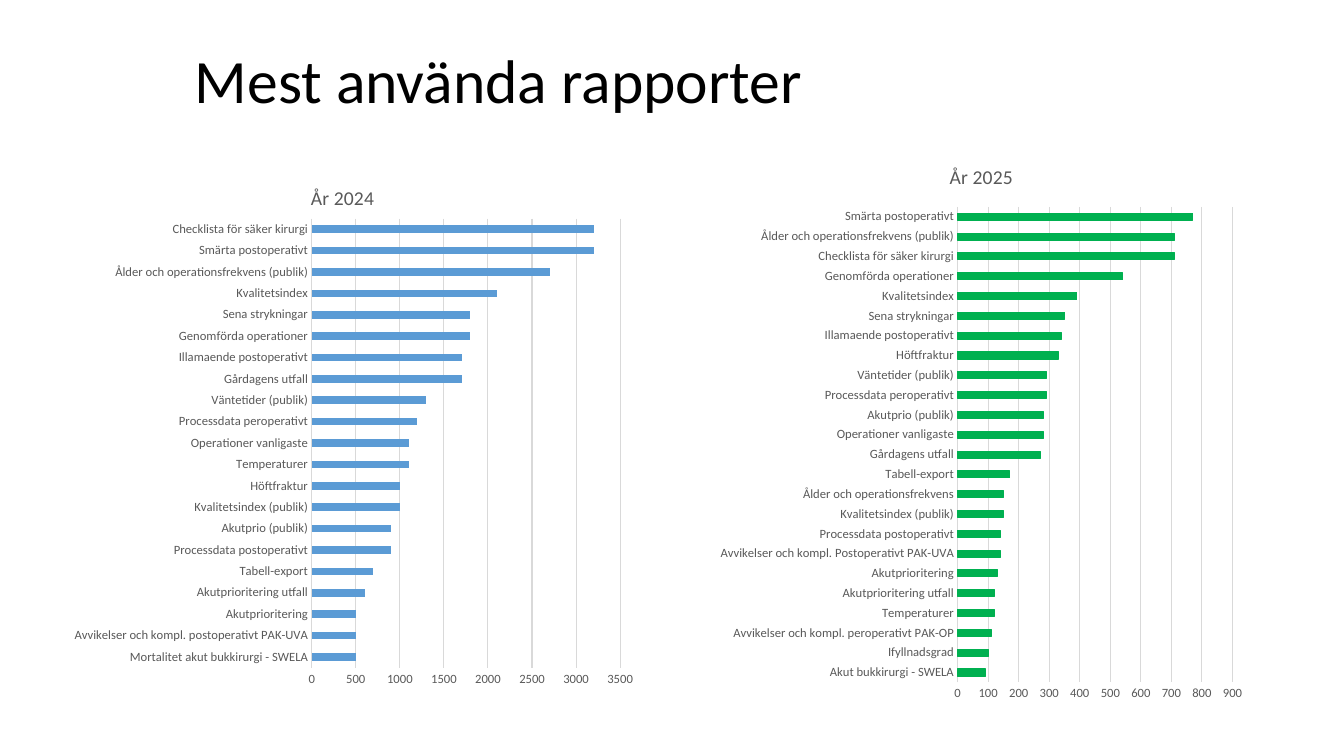
from pptx import Presentation, util as u
from pptx.chart.data import CategoryChartData
from pptx.dml.color import RGBColor
from pptx.enum import chart as kinds, text
from pptx.oxml import parse_xml
from pptx.oxml.ns import nsdecls, qn

BLACK = RGBColor(0x00, 0x00, 0x00)
GREY = RGBColor(0x59, 0x59, 0x59)
RULE = RGBColor(0xD9, 0xD9, 0xD9)
BLUE = RGBColor(0x5B, 0x9B, 0xD5)
GREEN = RGBColor(0x00, 0xB0, 0x50)

REPORTS_2024 = [
    ("Mortalitet akut bukkirurgi - SWELA", 500),
    ("Avvikelser och kompl. postoperativt PAK-UVA", 500),
    ("Akutprioritering", 500),
    ("Akutprioritering utfall", 600),
    ("Tabell-export", 700),
    ("Processdata postoperativt", 900),
    ("Akutprio (publik)", 900),
    ("Kvalitetsindex (publik)", 1000),
    ("Höftfraktur", 1000),
    ("Temperaturer", 1100),
    ("Operationer vanligaste", 1100),
    ("Processdata peroperativt", 1200),
    ("Väntetider (publik)", 1300),
    ("Gårdagens utfall", 1700),
    ("Illamaende postoperativt", 1700),
    ("Genomförda operationer", 1800),
    ("Sena strykningar", 1800),
    ("Kvalitetsindex", 2100),
    ("Ålder och operationsfrekvens (publik)", 2700),
    ("Smärta postoperativt", 3200),
    ("Checklista för säker kirurgi", 3200),
]
REPORTS_2025 = [
    ("Akut bukkirurgi - SWELA", 90),
    ("Ifyllnadsgrad", 100),
    ("Avvikelser och kompl. peroperativt PAK-OP", 110),
    ("Temperaturer", 120),
    ("Akutprioritering utfall", 120),
    ("Akutprioritering", 130),
    ("Avvikelser och kompl. Postoperativt PAK-UVA", 140),
    ("Processdata postoperativt", 140),
    ("Kvalitetsindex (publik)", 150),
    ("Ålder och operationsfrekvens", 150),
    ("Tabell-export", 170),
    ("Gårdagens utfall", 270),
    ("Operationer vanligaste", 280),
    ("Akutprio (publik)", 280),
    ("Processdata peroperativt", 290),
    ("Väntetider (publik)", 290),
    ("Höftfraktur", 330),
    ("Illamaende postoperativt", 340),
    ("Sena strykningar", 350),
    ("Kvalitetsindex", 390),
    ("Genomförda operationer", 540),
    ("Checklista för säker kirurgi", 710),
    ("Ålder och operationsfrekvens (publik)", 710),
    ("Smärta postoperativt", 770),
]


class ReportPage:
    family = "Calibri"

    def __init__(self, deck):
        self.page = deck.slides.add_slide(deck.slide_layouts[5])

    def style(self, font, size, color):
        font.name = self.family
        font.size = u.Pt(size)
        font.color.rgb = color
        font.bold = False

    def title(self, words, area):
        box = self.page.shapes.title
        box.left, box.top, box.width, box.height = map(u.Pt, area)
        frame = box.text_frame
        frame.text = words
        frame.word_wrap = True
        frame.auto_size = text.MSO_AUTO_SIZE.NONE
        frame.vertical_anchor = text.MSO_ANCHOR.MIDDLE
        para = frame.paragraphs[0]
        para.alignment = text.PP_ALIGN.LEFT
        para.line_spacing = 0.9
        self.style(para.runs[0].font, 44, BLACK)

    def bars(self, name, reports, color, area, maximum, step, plot_area=None):
        data = CategoryChartData()
        data.categories = [report for report, _ in reports]
        data.add_series(name, [count for _, count in reports])
        chart = self.page.shapes.add_chart(
            kinds.XL_CHART_TYPE.BAR_CLUSTERED, *map(u.Pt, area), data).chart
        self.style(chart.font, 10, BLACK)
        chart.has_legend = False
        chart.has_title = True
        heading = chart.chart_title
        heading.include_in_layout = False
        heading.text_frame.text = name
        self.style(heading.text_frame.paragraphs[0].runs[0].font, 14, GREY)

        plot = chart.plots[0]
        plot.gap_width = 182
        plot.vary_by_categories = False
        bar_format = plot.series[0].format
        bar_format.fill.solid()
        bar_format.fill.fore_color.rgb = color
        if color == GREEN:
            self.line(bar_format.line, color)

        for axis in (chart.category_axis, chart.value_axis):
            axis.major_tick_mark = kinds.XL_TICK_MARK.NONE
            axis.minor_tick_mark = kinds.XL_TICK_MARK.NONE
            self.style(axis.tick_labels.font, 9, GREY)
        self.line(chart.category_axis.format.line, RULE)
        values = chart.value_axis
        values.minimum_scale = 0
        values.maximum_scale = maximum
        values.major_unit = step
        values.format.line.fill.background()
        values.has_major_gridlines = True
        self.line(values.major_gridlines.format.line, RULE)
        if plot_area:
            self.place_plot(chart, plot_area)

    def line(self, line, color):
        line.color.rgb = color
        line.width = u.Pt(0.75)

    def place_plot(self, chart, plot_area):
        holder = chart._chartSpace.chart.plotArea
        for layout in holder.findall(qn("c:layout")):
            holder.remove(layout)
        sides = "".join(f'<c:{side} val="{value}"/>'
                        for side, value in zip("xywh", plot_area))
        holder.insert(0, parse_xml(
            f'<c:layout {nsdecls("c")}><c:manualLayout>'
            '<c:layoutTarget val="inner"/><c:xMode val="edge"/>'
            f'<c:yMode val="edge"/>{sides}</c:manualLayout></c:layout>'))


def main():
    deck = Presentation()
    deck.slide_width, deck.slide_height = u.Pt(960), u.Pt(540)
    page = ReportPage(deck)
    page.bars("År 2024", REPORTS_2024, BLUE, (24.5, 117.5, 440.5, 386.5),
              3500, 500, (0.45, 0.1, 0.5, 0.83))
    page.bars("År 2025", REPORTS_2025, GREEN, (507, 102, 388, 407), 900, 100)
    page.title("Mest använda rapporter", (132, 26, 569, 67.5))
    deck.save("out.pptx")


if __name__ == "__main__":
    main()
